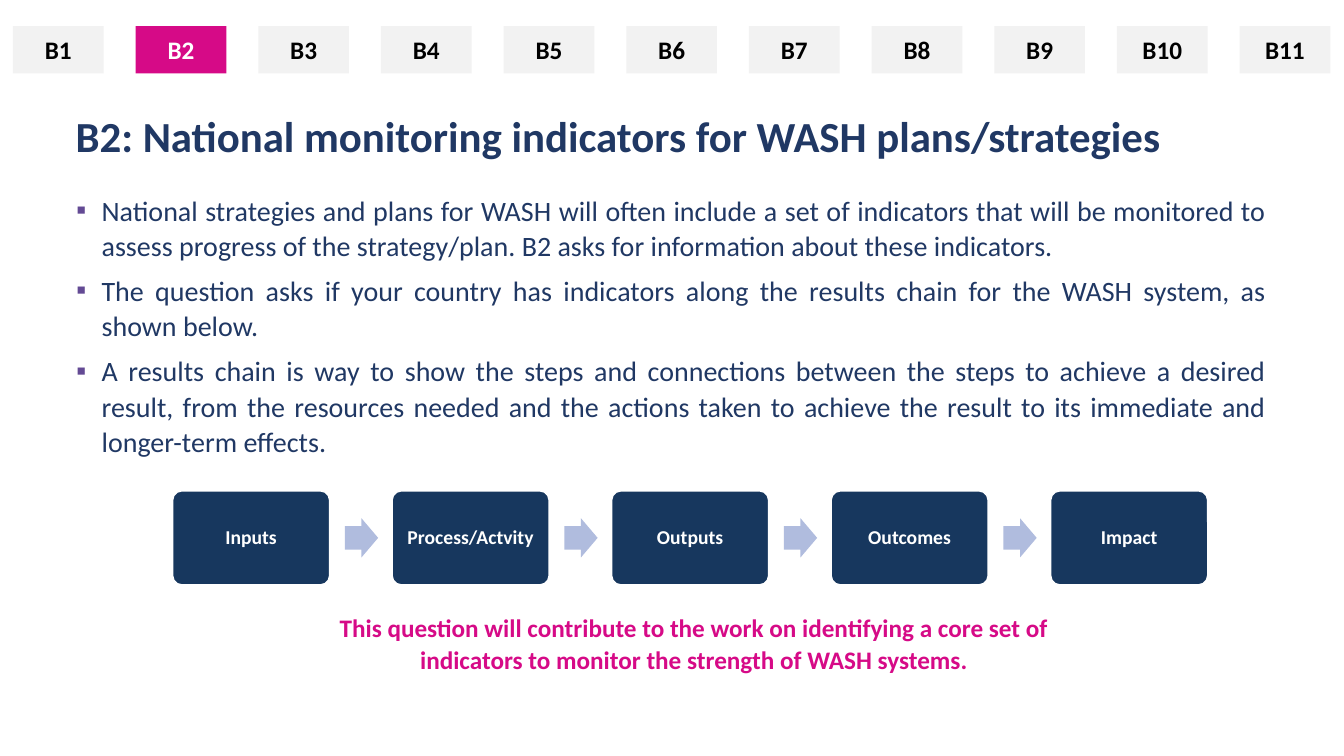
import pptx
import pptx.dml.color
import pptx.enum.shapes
import pptx.enum.text
import pptx.oxml
import pptx.oxml.ns
import pptx.util

Pt = pptx.util.Pt
ALIGN = pptx.enum.text.PP_ALIGN
ANCHOR = pptx.enum.text.MSO_ANCHOR
SHAPE = pptx.enum.shapes.MSO_SHAPE

TABS = [f"B{number}" for number in range(1, 12)]
CURRENT_TAB = "B2"
STEPS = ["Inputs", "Process/Actvity", "Outputs", "Outcomes", "Impact"]
TITLE = "B2: National monitoring indicators for WASH plans/strategies"
POINTS = [
    "National strategies and plans for WASH will often include a set of indicators that will be "
    "monitored to assess progress of the strategy/plan. B2 asks for information about these indicators.",
    "The question asks if your country has indicators along the results chain for the WASH system, "
    "as shown below.",
    "A results chain is way to show the steps and connections between the steps to achieve a desired "
    "result, from the resources needed and the actions taken to achieve the result to its immediate "
    "and longer-term effects.",
]
CAPTION = ("This question will contribute to the work on identifying a core set of "
           "indicators to monitor the strength of WASH systems.")


def color(value):
    return pptx.dml.color.RGBColor.from_string(value)


class SlideBuilder:
    font = "Calibri"
    ink = "203864"
    accent = "D60A87"
    pale = "F2F2F2"
    navy = "17375E"
    arrow_fill = "B0BCDE"
    bullet_color = "634A94"
    white = "FFFFFF"
    black = "000000"

    def __init__(self, deck):
        self.page = deck.slides.add_slide(deck.slide_layouts[5])

    def set_text(self, box, lines, size, ink, bold=False, align=ALIGN.CENTER,
                 anchor=ANCHOR.MIDDLE, spacing=1.0, after=0):
        frame = box.text_frame
        frame.word_wrap = True
        frame.auto_size = pptx.enum.text.MSO_AUTO_SIZE.NONE
        frame.vertical_anchor = anchor
        frame.text = "\n".join(lines)
        for para in frame.paragraphs:
            para.alignment = align
            para.line_spacing = spacing
            para.space_before = Pt(0)
            para.space_after = Pt(after)
            for span in para.runs:
                span.font.name = self.font
                span.font.size = Pt(size)
                span.font.bold = bold
                span.font.color.rgb = color(ink)

    def title(self, text, left, top, width, height):
        box = self.page.shapes.title
        box.left, box.top, box.width, box.height = map(Pt, (left, top, width, height))
        self.set_text(box, [text], 30.6, self.ink, True, ALIGN.LEFT, ANCHOR.BOTTOM, 0.9)

    def text(self, lines, left, top, width, height, *style, **options):
        box = self.page.shapes.add_textbox(*map(Pt, (left, top, width, height)))
        self.set_text(box, lines, *style, **options)
        return box

    def bullets(self, lines, left, top, width, height):
        box = self.text(lines, left, top, width, height, 20, self.ink,
                        align=ALIGN.JUSTIFY, anchor=ANCHOR.TOP, spacing=1.05, after=3)
        namespace = pptx.oxml.ns.nsdecls("a")
        for index, para in enumerate(box.text_frame.paragraphs):
            para.space_before = Pt(4 if index else 0)
            properties = para._p.get_or_add_pPr()
            properties.set("marL", str(Pt(18)))
            properties.set("indent", str(Pt(-18)))
            for markup in (
                f'<a:buClr {namespace}><a:srgbClr val="{self.bullet_color}"/></a:buClr>',
                f'<a:buFont {namespace} typeface="{self.font}"/>',
                f'<a:buChar {namespace} char="▪"/>',
            ):
                properties.append(pptx.oxml.parse_xml(markup))

    def shape(self, kind, left, top, width, height, fill, line=None, adjust=()):
        box = self.page.shapes.add_shape(kind, *map(Pt, (left, top, width, height)))
        box.shadow.inherit = False
        box.fill.solid()
        box.fill.fore_color.rgb = color(fill)
        if line:
            box.line.color.rgb = color(line)
            box.line.width = Pt(1)
        else:
            box.line.fill.background()
        for index, value in enumerate(adjust):
            box.adjustments[index] = value
        return box

    def tab(self, label, left, current):
        box = self.shape(SHAPE.RECTANGLE, left, 18.7, 64.8, 33.8,
                         self.accent if current else self.pale)
        self.set_text(box, [label], 18, self.white if current else self.black, True)

    def step(self, label, left):
        box = self.shape(SHAPE.ROUNDED_RECTANGLE, left, 350.6, 112.2, 67.2,
                         self.navy, self.white, [0.1])
        frame = box.text_frame
        frame.margin_left = frame.margin_right = Pt(4.2)
        frame.margin_top = frame.margin_bottom = Pt(4.2)
        self.set_text(box, [label], 14, self.white, True, spacing=0.9)

    def arrow(self, left):
        self.shape(SHAPE.RIGHT_ARROW, left, 370.2, 23.8, 28, self.arrow_fill, adjust=[0.6, 0.5])


def main():
    deck = pptx.Presentation()
    deck.slide_width, deck.slide_height = Pt(960), Pt(540)
    slide = SlideBuilder(deck)

    slide.title(TITLE, 46.8, 53.3, 864, 66.2)
    slide.bullets(POINTS, 47.5, 133.2, 864, 352.8)

    for index, label in enumerate(TABS):
        slide.tab(label, 9.3 + 87.62 * index, label == CURRENT_TAB)

    for index, label in enumerate(STEPS):
        left = 123.3 + 156.8 * index
        if index:
            slide.arrow(left - 33.8)
        slide.step(label, left)

    slide.text([CAPTION], 208.8, 433.4, 573.8, 51.8, 18, slide.accent, True,
               spacing=1.05, after=10)
    deck.save("out.pptx")


if __name__ == "__main__":
    main()
